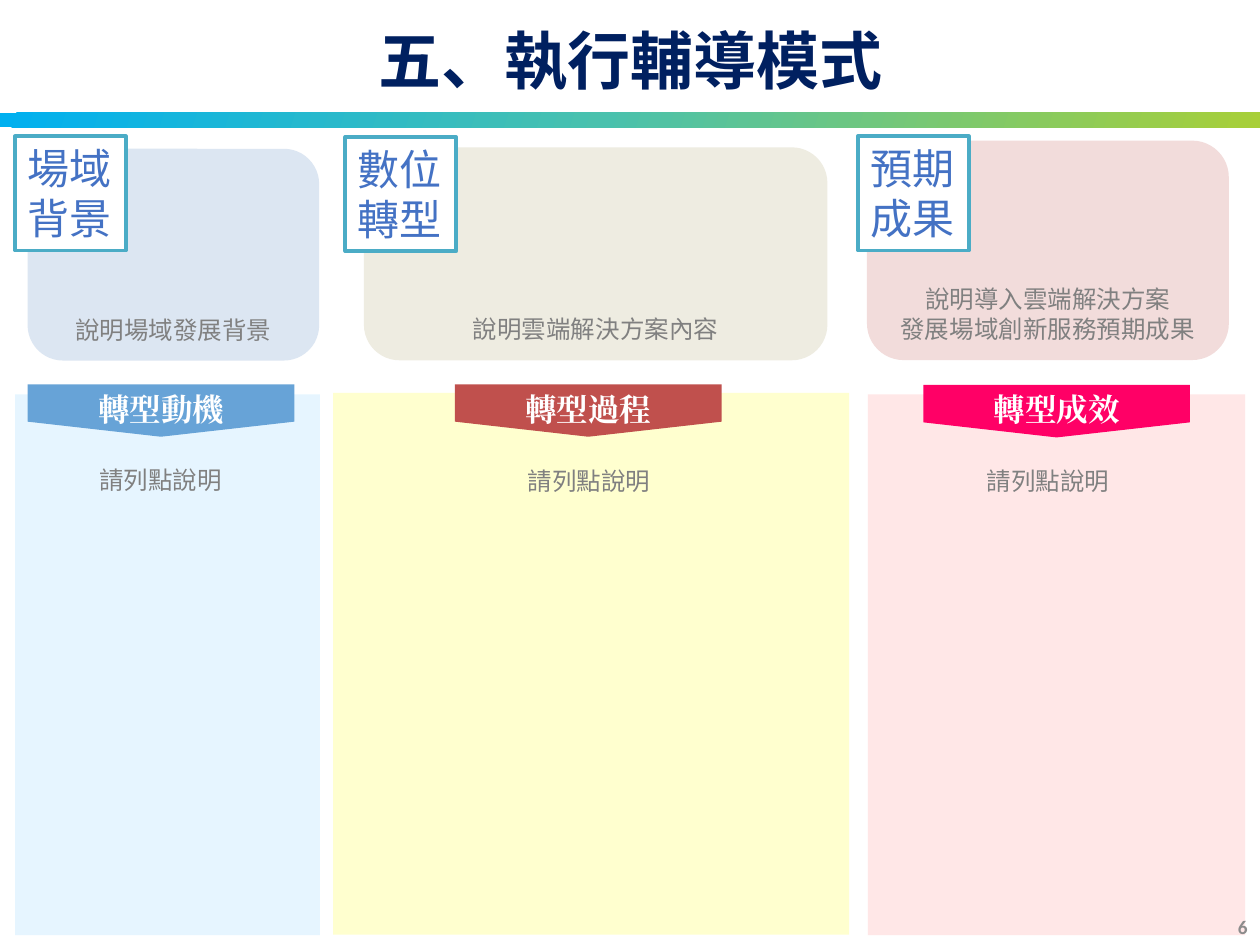
from copy import deepcopy

from lxml.etree import SubElement
from pptx import Presentation
from pptx.dml.color import RGBColor
from pptx.enum.shapes import MSO_SHAPE as Shape
from pptx.enum.text import MSO_ANCHOR as Anchor, PP_ALIGN as Align
from pptx.oxml.ns import qn
from pptx.util import Pt

COLORS = {
    "navy": "002060", "gray": "808080", "number": "8C8C8C", "white": "FFFFFF",
    "label": "4472C4", "border": "4BACC6",
}
BAR_STOPS = [(0, "00B0F0"), (0.48, "49C1AD"), (1, "A8CF38")]
SANS = "Noto Sans CJK SC"
INSETS = (7.2, 3.6, 7.2, 3.6)

COLUMNS = [
    {"panel": (8.6, 225.4, 174.2, 309), "panel_fill": "CCECFF", "opacity": 48,
     "tab": (15.8, 219.6), "tab_fill": "67A3D7", "tab_text": "轉型動機",
     "card": (15.8, 85, 166.6, 121), "card_fill": "DCE6F2",
     "card_text": ["說明場域發展背景"],
     "badge": (8.6, 77.8), "badge_text": ["場域", "背景"],
     "hint": (36, 262)},
    {"panel": (190.4, 224.6, 294.8, 309.6), "panel_fill": "FFFF99", "opacity": 47,
     "tab": (260, 219.6), "tab_fill": "C0504D", "tab_text": "轉型過程",
     "card": (208, 84.2, 264.8, 121.7), "card_fill": "EEECE1",
     "card_text": ["說明雲端解決方案內容"],
     "badge": (197.3, 78.2), "badge_text": ["數位", "轉型"],
     "hint": (280.8, 263)},
    {"panel": (496, 225.4, 215.5, 309), "panel_fill": "FFCCCC", "opacity": 47,
     "tab": (527.6, 220), "tab_fill": "FF0066", "tab_text": "轉型成效",
     "card": (495.4, 80.4, 206.8, 125.4), "card_fill": "F2DCDB",
     "card_text": ["說明導入雲端解決方案", "發展場域創新服務預期成果"],
     "badge": (490.2, 77.8), "badge_text": ["預期", "成果"],
     "hint": (543, 262.6)},
]


class Deck:
    def __init__(self):
        self.prs = Presentation()
        self.prs.slide_width, self.prs.slide_height = Pt(720), Pt(540)
        self.slide = self.prs.slides.add_slide(self.prs.slide_layouts[5])

    def set_text(self, sp, lines, size, color, font=SANS, align=Align.CENTER,
                 anchor=Anchor.TOP, bold=False, wrap=True, insets=INSETS):
        tf = sp.text_frame
        tf.word_wrap, tf.vertical_anchor = wrap, anchor
        tf.margin_left, tf.margin_top, tf.margin_right, tf.margin_bottom = map(Pt, insets)
        tf.text = "\n".join(lines)
        for p in tf.paragraphs:
            p.alignment = align
            f = p.font
            f.size, f.bold, f.name = Pt(size), bold, font
            f.color.rgb = RGBColor.from_string(COLORS[color])
            defaults = p._p.pPr.find(qn("a:defRPr"))
            SubElement(defaults, qn("a:ea")).set("typeface", font)

    def title(self, text, box):
        sp = self.slide.shapes.title
        sp.left, sp.top, sp.width, sp.height = map(Pt, box)
        self.set_text(sp, [text], 36, "navy", anchor=Anchor.MIDDLE, bold=True)

    def text(self, box, line, size, color, **style):
        sp = self.slide.shapes.add_textbox(*map(Pt, box))
        self.set_text(sp, [line], size, color, **style)

    def shape(self, kind, box, fill, line=None):
        sp = self.slide.shapes.add_shape(kind, *map(Pt, box))
        return self.paint(sp, fill, line)

    def paint(self, sp, fill, line=None):
        sp.shadow.inherit = False
        sp.fill.solid()
        sp.fill.fore_color.rgb = RGBColor.from_string(fill)
        if line:
            sp.line.color.rgb = RGBColor.from_string(line)
            sp.line.width = Pt(2)
        else:
            sp.line.fill.background()
        return sp

    def bar(self, box, stops, angle):
        sp = self.shape(Shape.RECTANGLE, box, stops[0][1])
        sp.fill.gradient()
        sp.fill.gradient_angle = angle
        first = sp.fill.gradient_stops[0]._gs
        first.addnext(deepcopy(first))
        for stop, (position, color) in zip(sp.fill.gradient_stops, stops):
            stop.position = position
            stop.color.rgb = RGBColor.from_string(color)

    def panel(self, box, fill, opacity):
        sp = self.shape(Shape.RECTANGLE, box, fill)
        color = sp._element.spPr.find(".//" + qn("a:srgbClr"))
        SubElement(color, qn("a:alpha")).set("val", str(opacity * 1000))

    def tab(self, left, top, fill, text):
        width, shoulder, height = 152.4, 21.4, 30
        builder = self.slide.shapes.build_freeform(Pt(left), Pt(top))
        points = [(width, 0), (width, shoulder), (width / 2, height), (0, shoulder)]
        builder.add_line_segments([(Pt(left + x), Pt(top + y)) for x, y in points])
        self.paint(builder.convert_to_shape(), fill)
        self.text((left + 13.6, top + 1.4, 125.2, 23), text, 18, "white",
                  font="Times New Roman", bold=True, insets=(0, 1.7, 0, 0))

    def card(self, box, fill, lines):
        sp = self.shape(Shape.ROUNDED_RECTANGLE, box, fill)
        self.set_text(sp, lines, 14, "gray", anchor=Anchor.BOTTOM)

    def badge(self, left, top, lines):
        sp = self.shape(Shape.RECTANGLE, (left, top, 63.4, 65.4),
                        COLORS["white"], COLORS["border"])
        self.set_text(sp, lines, 24, "label", align=Align.LEFT, wrap=False)


def main():
    deck = Deck()
    deck.bar((0, 64.4, 720, 8.4), BAR_STOPS, 342)
    deck.title("五、執行輔導模式", (0, 0, 720, 67.7))
    for col in COLUMNS:
        deck.panel(col["panel"], col["panel_fill"], col["opacity"])
        deck.tab(*col["tab"], col["tab_fill"], col["tab_text"])
        deck.card(col["card"], col["card_fill"], col["card_text"])
        deck.badge(*col["badge"], col["badge_text"])
        deck.text((*col["hint"], 111.6, 24.4), "請列點說明", 14, "gray", font="Arial")
    deck.text((552, 515.5, 168, 28.8), "6", 11, "number", font="Calibri",
              align=Align.RIGHT, anchor=Anchor.MIDDLE, bold=True)
    deck.prs.save("out.pptx")


if __name__ == "__main__":
    main()
